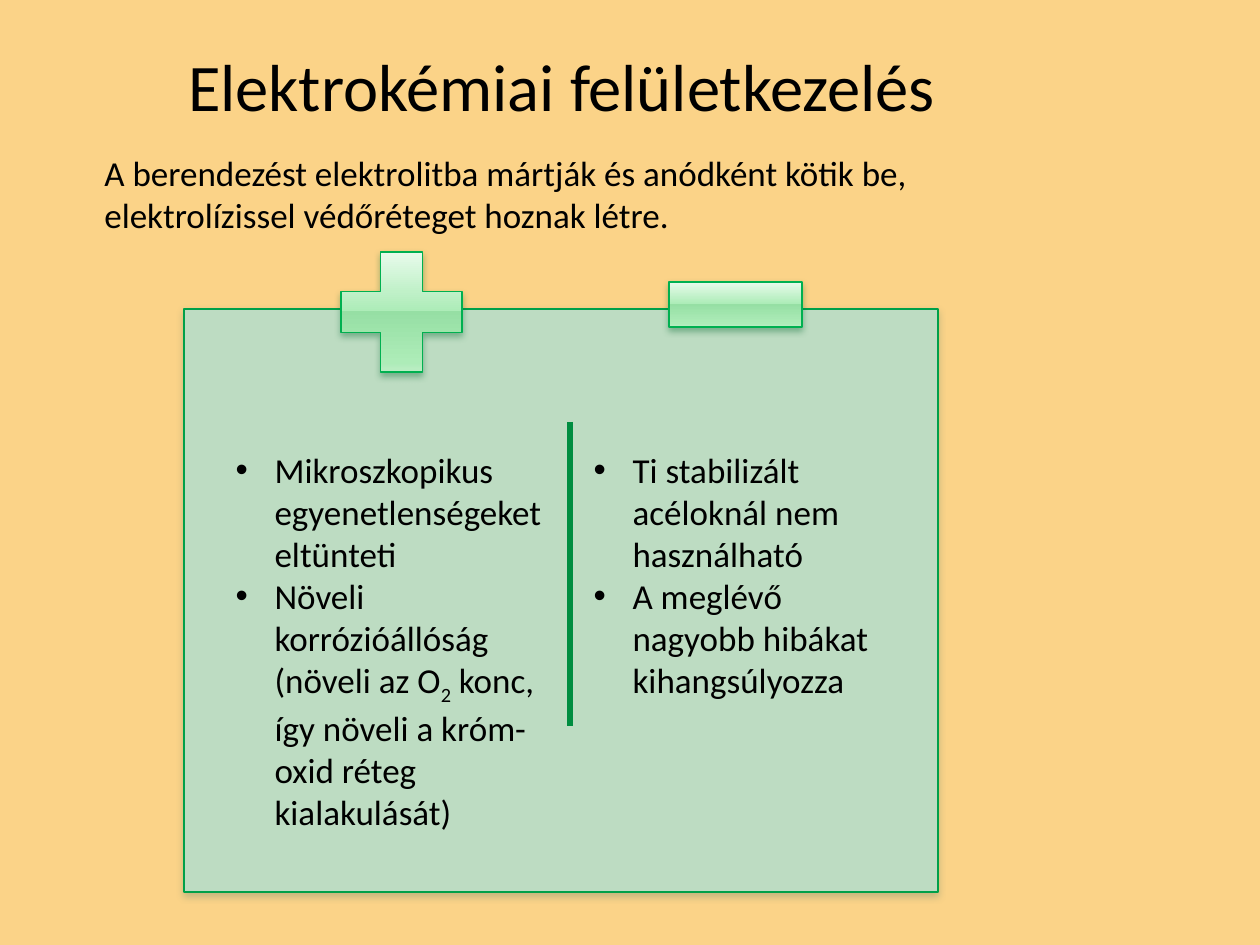
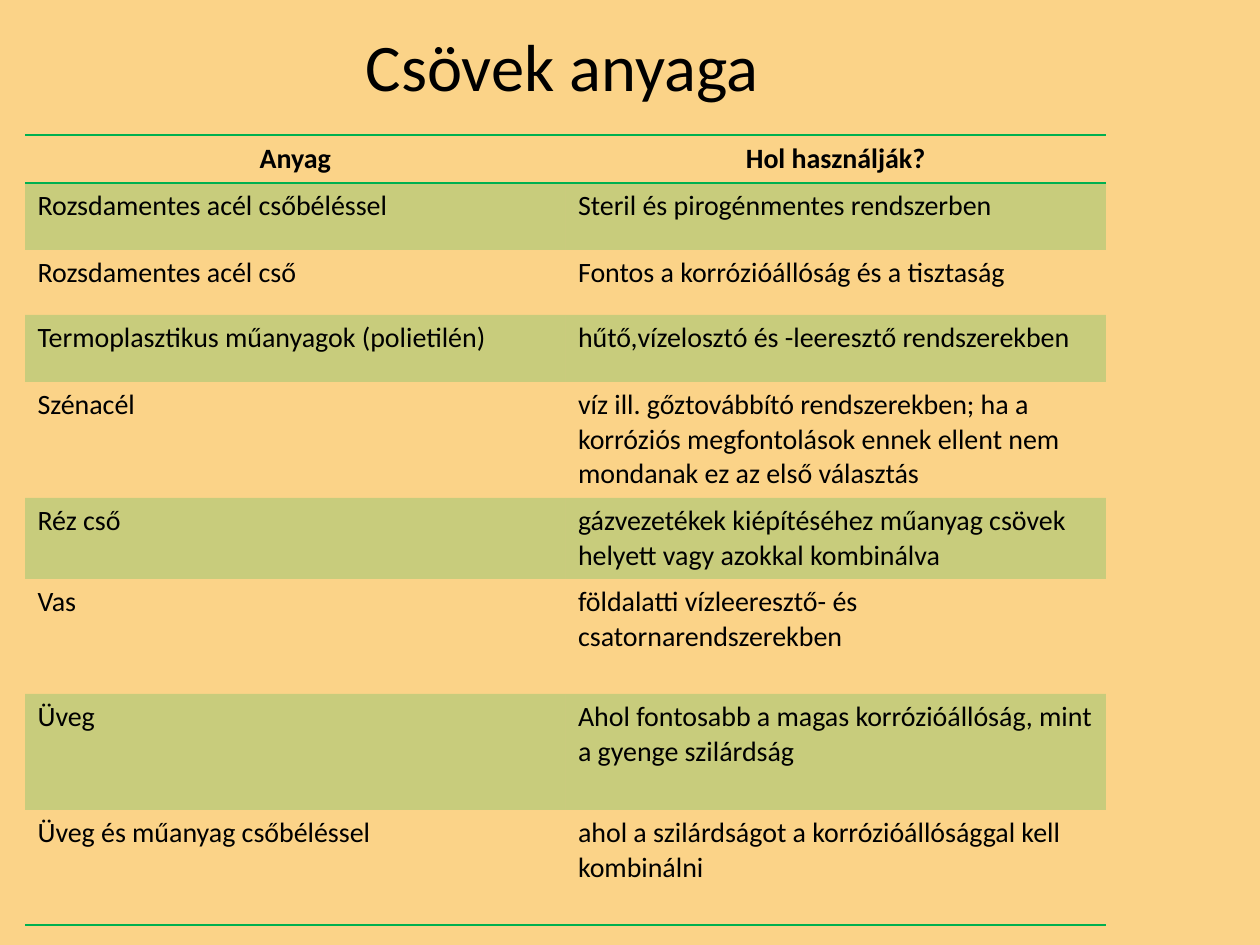
from lxml.etree import SubElement as Sub
from pptx import Presentation
from pptx.dml.color import RGBColor as RGB
from pptx.enum.shapes import MSO_CONNECTOR as LINK, MSO_SHAPE as SHAPE
from pptx.enum.text import MSO_ANCHOR as ANCHOR, MSO_AUTO_SIZE as AUTO, PP_ALIGN as ALIGN
from pptx.oxml.ns import qn
from pptx.util import Emu, Pt

SAND = RGB(0xFB, 0xD3, 0x88)
BLACK = RGB(0, 0, 0)
MINT = RGB(0xBD, 0xDC, 0xC2)
GREEN = RGB(0, 0xB0, 0x50)
EDGE = RGB(0, 0xA0, 0x49)
RULE = RGB(0, 0x8D, 0x40)
DUSK = RGB(0x6B, 0x87, 0x70)
DEEP = RGB(0, 0x68, 0x2F)
PALE = RGB(0xE8, 0xFB, 0xEB)
LEAF = RGB(0xAD, 0xEC, 0xB8)
FERN = RGB(0x96, 0xDF, 0xA4)
FOAM = RGB(0xBC, 0xED, 0xC5)
GLOSS = [(0, PALE), (49, LEAF), (49, FERN), (92, LEAF), (100, FOAM)]
FACE = "Calibri"
PLAIN = "{2D5ABB26-0587-4C30-8999-92F81FD0307C}"

INTRO = ("A berendezést elektrolitba mártják és anódként kötik be, "
         "elektrolízissel védőréteget hoznak létre.")
LISTS = [
    ((223, 442, 338, 394), [
        ["Mikroszkopikus egyenetlenségeket eltünteti"],
        ["Növeli korrózióállóság (növeli az O", "2",
         " konc, így növeli a króm-oxid réteg kialakulását)"]]),
    ((581, 442, 307, 267), [
        ["Ti stabilizált acéloknál nem használható"],
        ["A meglévő nagyobb hibákat kihangsúlyozza"]]),
]
SIGNS = [(SHAPE.CROSS, (341, 252, 121, 120)),
         (SHAPE.RECTANGLE, (669, 282, 133, 45))]
PIPES = [
    (48, "Anyag", "Hol használják?"),
    (67, "Rozsdamentes acél csőbéléssel", "Steril és pirogénmentes rendszerben"),
    (65, "Rozsdamentes acél cső", "Fontos a korrózióállóság és a tisztaság"),
    (67, "Termoplasztikus műanyagok (polietilén)",
     "hűtő,vízelosztó és -leeresztő rendszerekben"),
    (116, "Szénacél", "víz ill. gőztovábbító rendszerekben; ha a korróziós "
     "megfontolások ennek ellent nem mondanak ez az első választás"),
    (81, "Réz cső", "gázvezetékek kiépítéséhez műanyag csövek helyett "
     "vagy azokkal kombinálva"),
    (115, "Vas", "földalatti vízleeresztő- és csatornarendszerekben"),
    (116, "Üveg", "Ahol fontosabb a magas korrózióállóság, mint a gyenge szilárdság"),
    (115, "Üveg és műanyag csőbéléssel",
     "ahol a szilárdságot a korrózióállósággal kell kombinálni"),
]


def px(n):
    return Emu(round(n * 914400 / 126))


def box(rect):
    return [px(n) for n in rect]


def place(shape, rect):
    shape.left, shape.top, shape.width, shape.height = box(rect)


def style(para, size, bold=False, align=ALIGN.LEFT):
    para.alignment = align
    font = para.font
    font.name, font.size, font.bold = FACE, Pt(size), bold
    font.color.rgb = BLACK


def tint(parent, color, alpha=None):
    node = Sub(parent, qn("a:srgbClr"), val=str(color))
    if alpha:
        Sub(node, qn("a:alpha"), val=str(alpha * 1000))


def head(slide, text, rect):
    title = slide.shapes.title
    place(title, rect)
    frame = title.text_frame
    frame.text = text
    frame.auto_size = AUTO.NONE
    frame.vertical_anchor = ANCHOR.BOTTOM
    frame.margin_left = frame.margin_right = px(6)
    frame.margin_top = frame.margin_bottom = 0
    style(frame.paragraphs[0], 38, align=ALIGN.CENTER)


def panel(slide, kind, rect, edge, shade):
    shape = slide.shapes.add_shape(kind, *box(rect))
    shape.line.color.rgb = edge
    shape.line.width = Pt(0.9)
    shape.shadow.inherit = False
    glow = Sub(shape.element.spPr.find(qn("a:effectLst")), qn("a:outerShdw"),
               blurRad=str(Pt(4)), dist=str(Pt(2)), dir="5400000", rotWithShape="0")
    tint(glow, shade, 38)
    return shape


def gloss(shape):
    shape.fill.gradient()
    shape.fill.gradient_angle = 270
    stops = shape.element.spPr.find(qn("a:gradFill")).find(qn("a:gsLst"))
    stops.clear()
    for pos, color in GLOSS:
        tint(Sub(stops, qn("a:gs"), pos=str(pos * 1000)), color)


def fill_list(slide, body, rect, items):
    place(body, rect)
    slide.shapes.element.append(body.element)
    frame = body.text_frame
    frame.auto_size = AUTO.NONE
    for i, parts in enumerate(items):
        para = frame.add_paragraph() if i else frame.paragraphs[0]
        props = para._p.get_or_add_pPr()
        props.set("marL", str(px(39)))
        props.set("indent", str(-px(39)))
        Sub(props, qn("a:buChar"), char="•")
        para.space_before = Pt(0)
        for part in parts:
            run = para.add_run()
            run.text = part
            if part == "2":
                run._r.get_or_add_rPr().set("baseline", "-25000")
        style(para, 20)


def border(cell, side):
    line = Sub(cell._tc.get_or_add_tcPr(), qn("a:" + side), w=str(Pt(1)))
    tint(Sub(line, qn("a:solidFill")), GREEN)


def coat_slide(deck):
    slide = deck.slides.add_slide(deck.slide_layouts[3])
    head(slide, "Elektrokémiai felületkezelés", (63, 44, 998, 81))
    frame = slide.shapes.add_textbox(*box((92, 145, 932, 136))).text_frame
    frame.word_wrap = True
    frame.text = INTRO
    style(frame.paragraphs[0], 20)

    card = panel(slide, SHAPE.RECTANGLE, (184, 309, 754, 583), EDGE, DUSK)
    card.fill.solid()
    card.fill.fore_color.rgb = MINT
    for kind, rect in SIGNS:
        sign = panel(slide, kind, rect, GREEN, DEEP)
        gloss(sign)
        if kind == SHAPE.CROSS:
            sign.adjustments[0] = 0.33
    rule = slide.shapes.add_connector(LINK.STRAIGHT, *box((570, 422, 570, 726)))
    rule.line.color.rgb = RULE
    rule.line.width = Pt(3.15)
    Sub(rule.element.spPr, qn("a:effectLst"))
    for idx, (rect, items) in enumerate(LISTS, 1):
        fill_list(slide, slide.placeholders[idx], rect, items)


def pipe_slide(deck):
    slide = deck.slides.add_slide(deck.slide_layouts[5])
    head(slide, "Csövek anyaga", (63, 16, 998, 89))
    high = sum(row[0] for row in PIPES)
    table = slide.shapes.add_table(len(PIPES), 2, *box((25, 135, 1081, high))).table
    table._tbl.tblPr.find(qn("a:tableStyleId")).text = PLAIN
    table.horz_banding = False
    last = len(PIPES) - 1
    for r, (tall, *texts) in enumerate(PIPES):
        table.rows[r].height = px(tall)
        for c, text in enumerate(texts):
            cell = table.cell(r, c)
            cell.text = text
            top = r == 0
            style(cell.text_frame.paragraphs[0], 16, top,
                  ALIGN.CENTER if top else ALIGN.LEFT)
            cell.vertical_anchor = ANCHOR.MIDDLE if top else ANCHOR.TOP
            if top:
                border(cell, "lnT")
            if r in (0, last):
                border(cell, "lnB")
            if r % 2:
                cell.fill.solid()
                cell.fill.fore_color.rgb = GREEN
                color = cell._tc.tcPr.find(qn("a:solidFill"))[0]
                Sub(color, qn("a:alpha"), val="20000")
            else:
                cell.fill.background()


def main():
    deck = Presentation()
    deck.slide_width, deck.slide_height = px(1260), px(945)
    back = deck.slide_master.background.fill
    back.solid()
    back.fore_color.rgb = SAND
    coat_slide(deck)
    pipe_slide(deck)
    deck.save("out.pptx")


if __name__ == "__main__":
    main()
